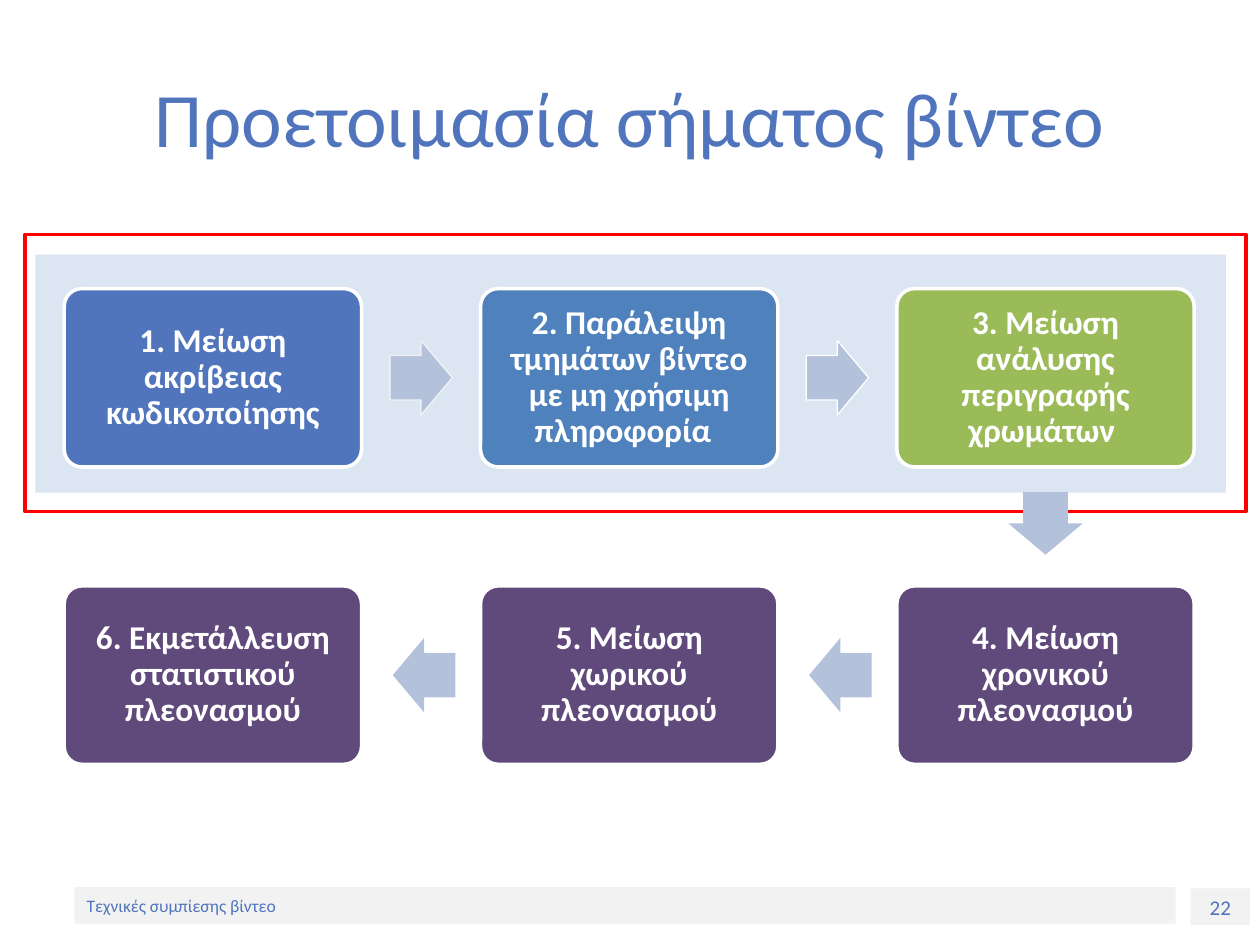
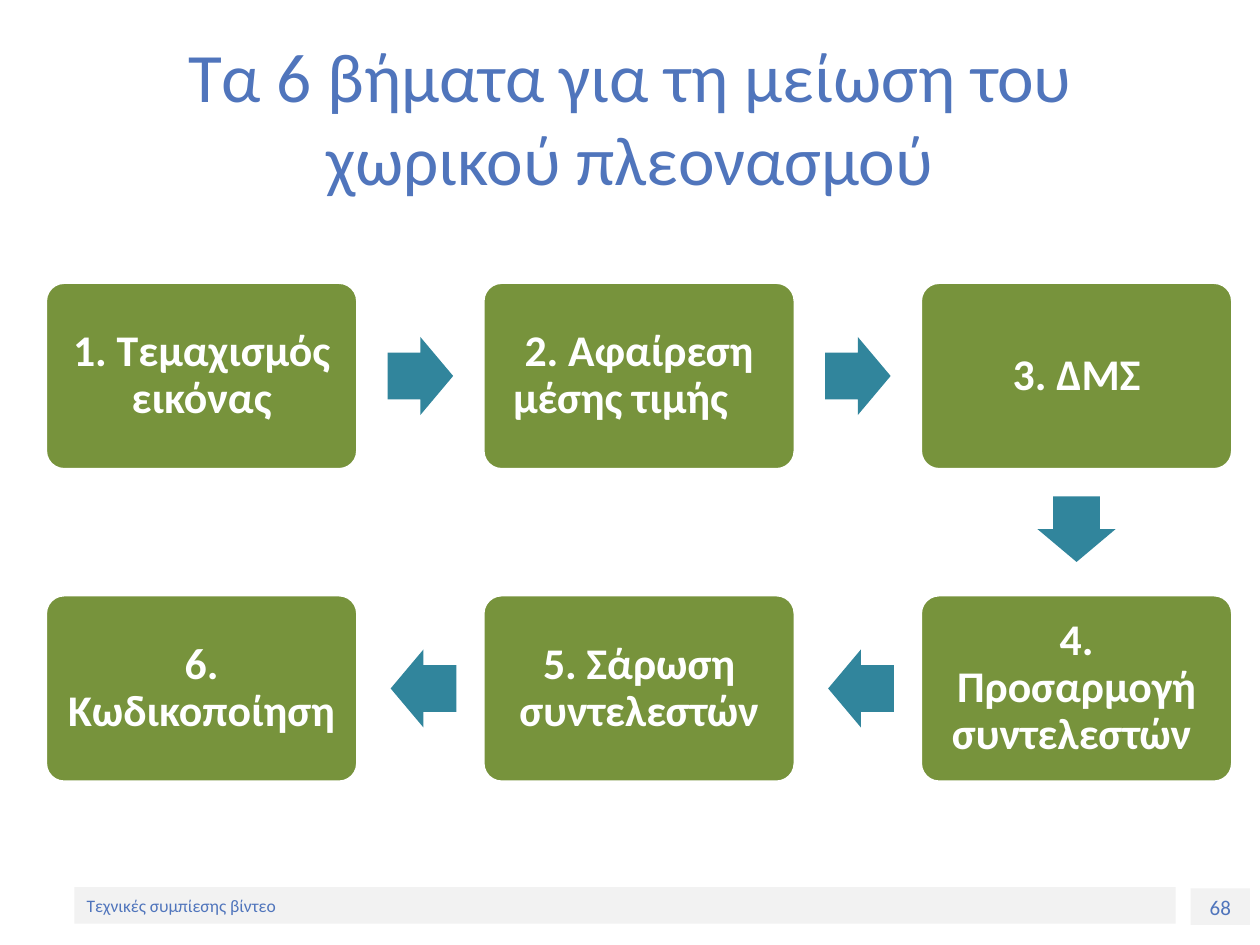
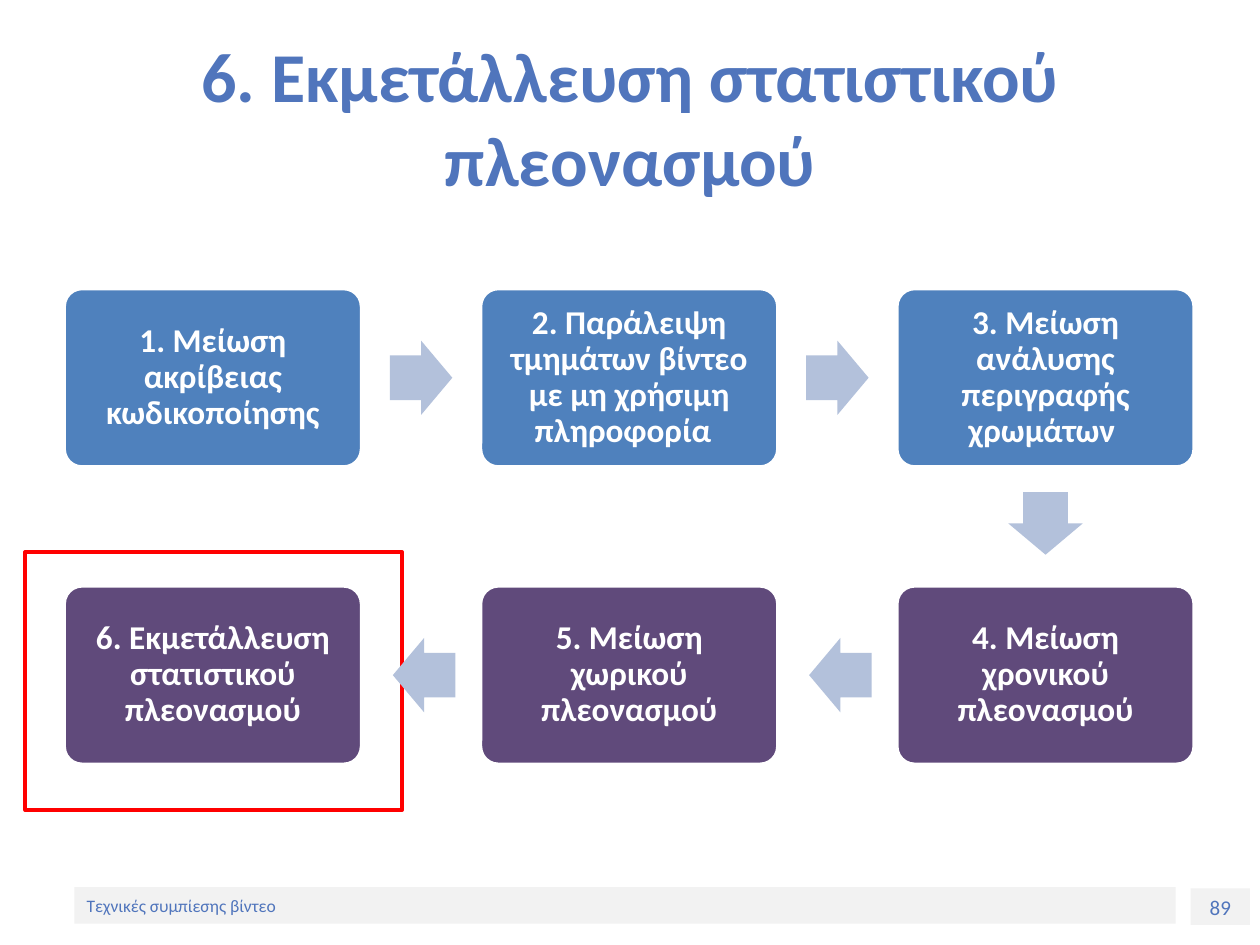
import pptx
import pptx.dml.color
import pptx.enum.shapes
import pptx.enum.text
import pptx.util

Inches = pptx.util.Inches
Pt = pptx.util.Pt
Shapes = pptx.enum.shapes.MSO_SHAPE
Align = pptx.enum.text.PP_ALIGN
Anchor = pptx.enum.text.MSO_ANCHOR

FONT = "Calibri"
FOOTER = "Τεχνικές συμπίεσης βίντεο"
COLORS = {
    "title": "5075BC",
    "blue": "4F81BD",
    "lime": "9BBB59",
    "purple": "604A7B",
    "olive": "77933C",
    "teal": "31859C",
    "arrow": "B3C1DB",
    "band": "DCE6F2",
    "footer": "F2F2F2",
    "frame": "FF0000",
    "white": "FFFFFF",
}

COMPRESSION_STEPS = [
    "1. Μείωση ακρίβειας κωδικοποίησης",
    "2. Παράλειψη τμημάτων βίντεο με μη χρήσιμη πληροφορία\t",
    "3. Μείωση ανάλυσης περιγραφής χρωμάτων ",
    "4. Μείωση χρονικού πλεονασμού",
    "5. Μείωση χωρικού πλεονασμού",
    "6. Εκμετάλλευση στατιστικού πλεονασμού",
]
SPATIAL_STEPS = [
    "1. Τεμαχισμός εικόνας",
    "2. Αφαίρεση μέσης τιμής\t",
    "3. ΔΜΣ",
    "4. Προσαρμογή συντελεστών ",
    "5. Σάρωση συντελεστών",
    "6. Κωδικοποίηση",
]
COMPRESSION_FLOW = {"left": 0.51, "top": 2.29, "width": 2.36, "size": 19, "margin": 0.08, "arrow": "arrow"}
SPATIAL_FLOW = {"left": 0.36, "top": 2.24, "width": 2.48, "size": 25, "margin": 0.1, "arrow": "teal"}

SLIDES = [
    {
        "title": "Προετοιμασία σήματος βίντεο", "title_size": 44, "bold": False, "number": "22",
        "panels": [((0.2, 1.86, 9.69, 2.2), None, "frame"), ((0.28, 2.02, 9.45, 1.89), "band", None)],
        "flow": COMPRESSION_FLOW, "steps": COMPRESSION_STEPS,
        "fills": ["title", "blue", "lime"] + ["purple"] * 3,
        "arrow_lines": ["footer", "white", None, None, None],
    },
    {
        "title": "Τα 6 βήματα για τη μείωση του χωρικού πλεονασμού", "title_size": 39.6, "bold": False, "number": "68",
        "panels": [],
        "flow": SPATIAL_FLOW, "steps": SPATIAL_STEPS,
        "fills": ["olive"] * 6,
        "arrow_lines": [None] * 5,
    },
    {
        "title": "6. Εκμετάλλευση στατιστικού πλεονασμού", "title_size": 40, "bold": True, "number": "89",
        "panels": [((0.2, 4.38, 2.99, 2.05), "white", "frame")],
        "flow": COMPRESSION_FLOW, "steps": COMPRESSION_STEPS,
        "fills": ["blue"] * 3 + ["purple"] * 3,
        "arrow_lines": [None] * 5,
    },
]
POSITIONS = [(0, 0), (1, 0), (2, 0), (2, 1), (1, 1), (0, 1)]
TURNS = [0, 0, 90, 180, 180]


def add_box(slide, kind, place, fill, line=None, line_width=2):
    shape = slide.shapes.add_shape(kind, *[Inches(length) for length in place])
    shape.shadow.inherit = False
    if fill:
        shape.fill.solid()
        shape.fill.fore_color.rgb = pptx.dml.color.RGBColor.from_string(COLORS[fill])
    else:
        shape.fill.background()
    if line:
        shape.line.color.rgb = pptx.dml.color.RGBColor.from_string(COLORS[line])
        shape.line.width = Pt(line_width)
    else:
        shape.line.fill.background()
    return shape


def write(shape, text, size, color, bold=False, align=Align.CENTER, anchor=Anchor.MIDDLE):
    frame = shape.text_frame
    frame.word_wrap = True
    frame.auto_size = pptx.enum.text.MSO_AUTO_SIZE.NONE
    frame.vertical_anchor = anchor
    paragraph = frame.paragraphs[0]
    paragraph.alignment = align
    run = paragraph.add_run()
    run.text = text
    run.font.name = FONT
    run.font.size = Pt(size)
    run.font.bold = bold
    run.font.color.rgb = pptx.dml.color.RGBColor.from_string(COLORS[color])
    return paragraph


presentation = pptx.Presentation()
presentation.slide_width = Inches(10)
presentation.slide_height = Inches(7.5)

for content in SLIDES:
    slide = presentation.slides.add_slide(presentation.slide_layouts[5])
    title = slide.shapes.title
    title.left, title.top, title.width, title.height = [Inches(length) for length in (0.5, 0.3, 9, 1.25)]
    write(title, content["title"], content["title_size"], "title", content["bold"])

    number = add_box(slide, Shapes.RECTANGLE, (9.45, 7.05, 0.47, 0.29), "footer")
    write(number, content["number"], 12, "title", anchor=Anchor.TOP)
    footer = add_box(slide, Shapes.RECTANGLE, (0.59, 7.04, 8.74, 0.29), "footer")
    write(footer, FOOTER, 10, "title", align=Align.LEFT)

    for place, fill, line in content["panels"]:
        add_box(slide, Shapes.RECTANGLE, place, fill, line)

    flow = content["flow"]
    width = flow["width"]
    height = 0.6 * width
    for index, (column, row) in enumerate(POSITIONS):
        left = flow["left"] + column * 1.4 * width
        top = flow["top"] + row * width
        step = add_box(slide, Shapes.ROUNDED_RECTANGLE, (left, top, width, height), content["fills"][index], "white")
        step.adjustments[0] = 0.1
        paragraph = write(step, content["steps"][index], flow["size"], "white", True)
        paragraph.line_spacing = 0.9
        margin = Inches(flow["margin"])
        frame = step.text_frame
        frame.margin_left = frame.margin_top = frame.margin_right = frame.margin_bottom = margin

        if index < len(TURNS):
            turn = TURNS[index]
            center_x, center_y = {
                0: (left + 1.2 * width, top + height / 2),
                90: (left + width / 2, top + height + 0.19 * width),
                180: (left - 0.19 * width, top + height / 2),
            }[turn]
            arrow_width, arrow_height = 0.21 * width, 0.25 * width
            place = (center_x - arrow_width / 2, center_y - arrow_height / 2, arrow_width, arrow_height)
            arrow = add_box(slide, Shapes.RIGHT_ARROW, place, flow["arrow"], content["arrow_lines"][index], 0.75)
            arrow.adjustments[0] = 0.6
            arrow.adjustments[1] = 0.5
            arrow.rotation = turn

presentation.save("out.pptx")
